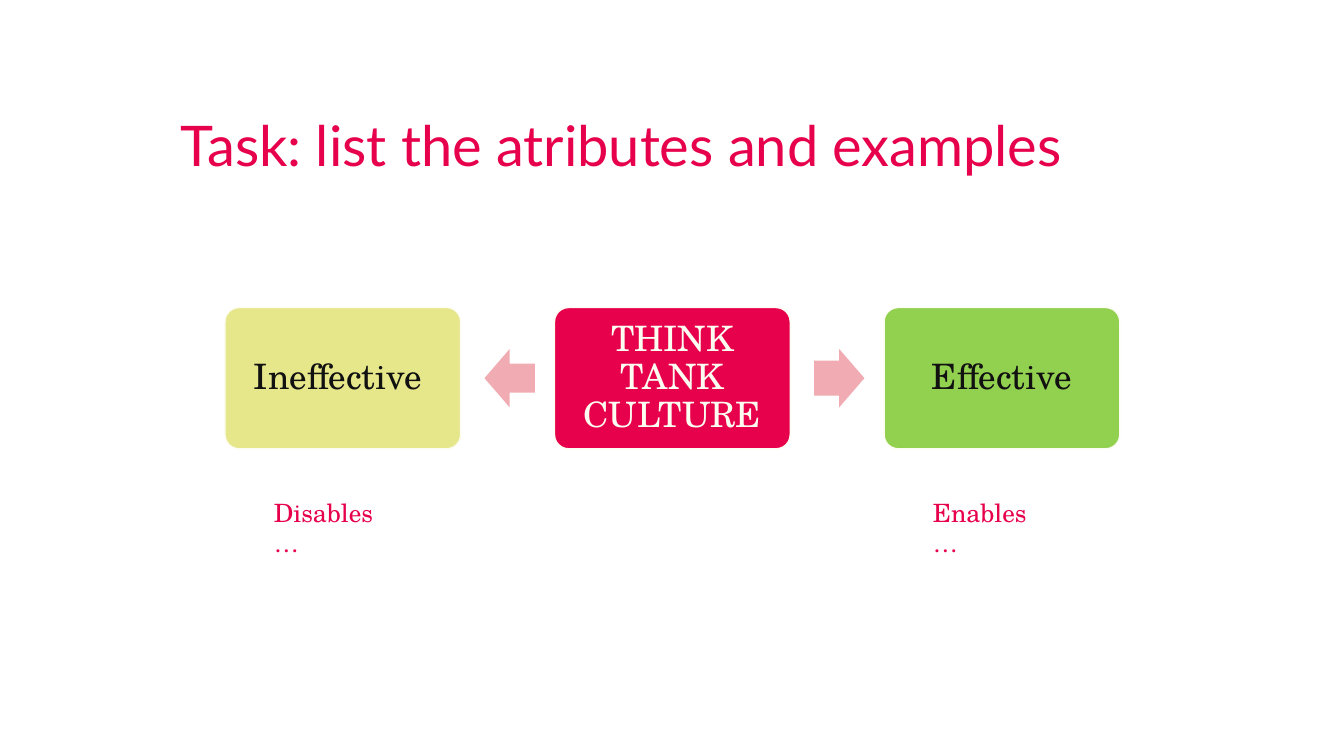
import pptx
import pptx.util
import pptx.dml.color
import pptx.enum.shapes
import pptx.enum.text

Cm, Pt = pptx.util.Cm, pptx.util.Pt
SHAPE = pptx.enum.shapes.MSO_SHAPE
ANCHOR = pptx.enum.text.MSO_ANCHOR
ALIGN = pptx.enum.text.PP_ALIGN

COLORS = {
    "accent": "E7004C",
    "ineffective": "E6E68B",
    "effective": "92D050",
    "arrow": "F1ABB2",
    "light": "FCFCF1",
    "dark": "111111",
}
HEADING_FONT, BODY_FONT = "Lato", "TeX Gyre Schola"


def rgb(name):
    return pptx.dml.color.RGBColor.from_string(COLORS[name])


def add_run(p, text, size, color, font=BODY_FONT):
    r = p.add_run()
    r.text = text
    r.font.name = font
    r.font.size = Pt(size)
    r.font.color.rgb = rgb(color)


def set_margins(tf, margin):
    tf.margin_left = tf.margin_right = tf.margin_top = tf.margin_bottom = margin


def add_title(slide, x, y, w, h, text):
    sp = slide.shapes.title
    sp.left, sp.top, sp.width, sp.height = x, y, w, h
    tf = sp.text_frame
    tf.vertical_anchor = ANCHOR.TOP
    tf.word_wrap = True
    set_margins(tf, 0)
    p = tf.paragraphs[0]
    p.alignment = ALIGN.LEFT
    p.line_spacing = 0.9
    add_run(p, text, 40, "accent", HEADING_FONT)


def add_filled(slide, kind, x, y, w, h, fill):
    sp = slide.shapes.add_shape(kind, x, y, w, h)
    sp.shadow.inherit = False
    sp.fill.solid()
    sp.fill.fore_color.rgb = rgb(fill)
    sp.line.fill.background()
    return sp


def add_card(slide, x, y, w, h, text, fill, color):
    sp = add_filled(slide, SHAPE.ROUNDED_RECTANGLE, x, y, w, h, fill)
    sp.adjustments[0] = 0.1
    sp.line.color.rgb = rgb("light")
    sp.line.width = Pt(1)
    tf = sp.text_frame
    tf.word_wrap = True
    tf.vertical_anchor = ANCHOR.MIDDLE
    set_margins(tf, Cm(0.25))
    p = tf.paragraphs[0]
    p.alignment = ALIGN.CENTER
    p.line_spacing = 0.9
    add_run(p, text, 25, color)


def add_label(slide, x, y, text):
    """Add a heading with an open line below it for answers."""
    sp = slide.shapes.add_textbox(x, y, Cm(3.4), Cm(1.02))
    tf = sp.text_frame
    tf.word_wrap = False
    p = tf.paragraphs[0]
    add_run(p, text, 18, "accent")
    p.add_line_break()
    add_run(p, "…", 18, "accent")


def add_culture_diagram(slide, x, y, w, h):
    """Place three cards across the box, an arrow in each gap, labels below the outer two."""
    card_w = Cm(5.94)
    pitch = (w - card_w) // 2
    cards = [
        ("Ineffective ", "ineffective", "dark", "Disables"),
        ("THINK TANK CULTURE", "accent", "light", None),
        ("Effective", "effective", "dark", "Enables"),
    ]
    for i, (text, fill, color, label) in enumerate(cards):
        left = x + i * pitch
        add_card(slide, left, y, card_w, h, text, fill, color)
        if label:
            add_label(slide, left + Cm(0.98), y + h + Cm(1.09), label)

    arrow_w, arrow_h = Cm(1.27), Cm(1.47)
    arrows = [(SHAPE.LEFT_ARROW, 0.5), (SHAPE.RIGHT_ARROW, 0.6)]
    for i, (kind, shaft) in enumerate(arrows):
        left = x + i * pitch + card_w + Cm(0.6)
        sp = add_filled(slide, kind, left, y + (h - arrow_h) // 2,
                        arrow_w, arrow_h, "arrow")
        sp.adjustments[0] = shaft


def main():
    prs = pptx.Presentation()
    prs.slide_width, prs.slide_height = Cm(33.87), Cm(19.05)
    slide = prs.slides.add_slide(prs.slide_layouts[5])
    add_title(slide, Cm(4.55), Cm(2.97), Cm(27), Cm(12.73),
              "Task: list the atributes and examples")
    add_culture_diagram(slide, Cm(5.67), Cm(7.75), Cm(22.55), Cm(3.56))
    prs.save("out.pptx")


if __name__ == "__main__":
    main()
